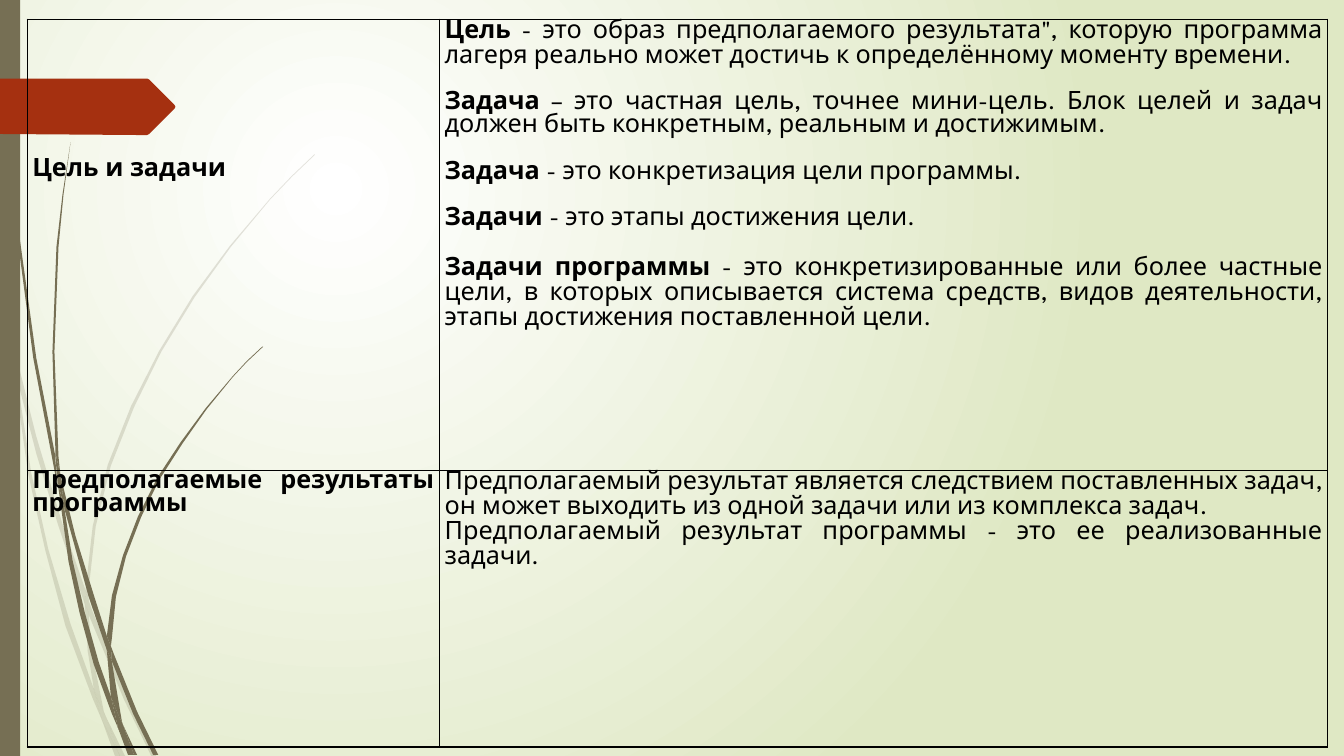
import pptx
import pptx.util
import pptx.dml.color
import pptx.enum.shapes
import pptx.enum.text
import pptx.oxml
import pptx.oxml.ns
import lxml.etree

Inches = pptx.util.Inches
Pt = pptx.util.Pt
RGBColor = pptx.dml.color.RGBColor

OLIVE = RGBColor(0x76, 0x6F, 0x54)
RUST = RGBColor(0xA5, 0x30, 0x10)
BLACK = RGBColor(0, 0, 0)
WHITE = RGBColor(0xFF, 0xFF, 0xFF)
LIME = RGBColor(0xDF, 0xE8, 0xC4)
FONT = "League Spartan"
SIZE = 18
GAP = 16.6  # height of one text line, in points
LOOSE = 1.07

# Outlines of the grass blades, in hundredths of an inch
PALE = [
    [(58, 522), (84, 599), (85, 586), (62, 520), (36, 433), (14, 345), (17, 376),
     (36, 450)],
    [(92, 607), (88, 596), (88, 610), (123, 694), (150, 750), (155, 750), (127, 692)],
    [(119, 750), (124, 750), (105, 711)],
    [(93, 683), (70, 619), (48, 545), (31, 469), (17, 376), (11, 350), (28, 470),
     (45, 546), (65, 621), (92, 693), (101, 714), (99, 707)],
    [(84, 599), (87, 646), (93, 683), (96, 692), (105, 711), (103, 706), (91, 646),
     (88, 610), (88, 608)],
    [(88, 584), (95, 522), (110, 462), (133, 404), (160, 349), (193, 295), (229, 245),
     (268, 198), (290, 175), (312, 154), (312, 153), (289, 175), (268, 197), (228, 244),
     (191, 294), (158, 348), (130, 403), (107, 461), (92, 522), (85, 584), (85, 586),
     (88, 596)],
    [(101, 714), (114, 750), (119, 750)],
    [(88, 608), (88, 610), (88, 596), (85, 586), (84, 599)],
    [(96, 692), (93, 683), (99, 707), (101, 714), (119, 750), (105, 711)],
]
DARK = [
    [(7, 110), (17, 233), (33, 355), (56, 477), (57, 481), (55, 457), (55, 453),
     (36, 355), (19, 232), (8, 109), (5, 48), (4, 0), (3, 0), (4, 48)],
    [(88, 592), (106, 645), (106, 631), (93, 590), (75, 532), (60, 472), (64, 505)],
    [(113, 649), (110, 641), (111, 656), (132, 708), (152, 749), (157, 749), (136, 706)],
    [(110, 691), (98, 657), (84, 607), (72, 556), (64, 505), (57, 477), (68, 557),
     (79, 608), (93, 659), (111, 708), (117, 722), (116, 717)],
    [(60, 472), (58, 453), (54, 349), (58, 245), (63, 193), (70, 141), (62, 193),
     (56, 245), (52, 349), (55, 449)],
    [(133, 749), (136, 749), (122, 719)],
    [(57, 477), (64, 505), (60, 472), (55, 449), (55, 453)],
    [(111, 633), (115, 592), (125, 552), (140, 513), (158, 476), (181, 440), (205, 406),
     (231, 374), (245, 359), (261, 344), (260, 344), (245, 358), (231, 373), (204, 405),
     (179, 439), (156, 474), (137, 512), (122, 551), (111, 591), (106, 631), (110, 641)],
    [(117, 722), (127, 749), (131, 749)],
    [(106, 645), (110, 691), (116, 706), (122, 719), (121, 716), (111, 656), (109, 651)],
    [(106, 645), (109, 651), (111, 656), (110, 641), (106, 631)],
    [(116, 706), (110, 691), (116, 717), (117, 722), (130, 749), (133, 749), (122, 719)],
]
ARROW = [(173, 108), (148, 133), (146, 134), (136, 134), (0, 133), (0, 78),
         (146, 78), (148, 79), (173, 104), (174, 106)]

# Cell text: (space before, line spacing, [(text, bold), ...])
GOALS = [
    (0, LOOSE, [("Цель", True),
                (" - это образ предполагаемого результата\", которую программа лагеря "
                 "реально может достичь к определённому моменту времени.", False)]),
    (GAP, 1, [("Задача", True),
              (" – это частная цель, точнее мини-цель. Блок целей и задач должен быть "
               "конкретным, реальным и достижимым.", False)]),
    (GAP, 1, [("Задача ", True), ("- это конкретизация цели программы.", False)]),
    (GAP, 1, [("Задачи ", True), ("- это этапы достижения цели.", False)]),
    (GAP * LOOSE, LOOSE, [
        ("Задачи программы", True),
        (" - это конкретизированные или более частные цели, в которых описывается "
         "система средств, видов деятельности, этапы достижения поставленной цели.",
         False)]),
]
RESULTS = [
    (0, LOOSE, [("Предполагаемый результат является следствием поставленных задач, он "
                 "может выходить из одной задачи или из комплекса задач.", False)]),
    (0, LOOSE, [("Предполагаемый результат программы - это ее реализованные задачи.",
                 False)]),
]
ROWS = [
    [[(0, 1, [("Цель и задачи", True)])], GOALS],
    [[(0, 1, [("Предполагаемые результаты программы", True)])], RESULTS],
]


def backdrop(slide):
    """Radial gradient centred in the upper left quarter."""
    fill = slide.background.fill
    fill.gradient()
    for place, (stop, color) in enumerate(zip(fill.gradient_stops, (WHITE, LIME))):
        stop.color.rgb = color
        stop.position = place
    grad = slide.background._cSld.find(".//" + pptx.oxml.ns.qn("a:gradFill"))
    grad.remove(grad.find(pptx.oxml.ns.qn("a:lin")))
    circle = lxml.etree.SubElement(grad, pptx.oxml.ns.qn("a:path"), path="circle")
    lxml.etree.SubElement(circle, pptx.oxml.ns.qn("a:fillToRect"),
                          l="50000", t="50000", r="100000", b="100000")


def paint(shape, color, alpha=100):
    shape.shadow.inherit = False
    shape.line.fill.background()
    shape.fill.solid()
    shape.fill.fore_color.rgb = color
    if alpha < 100:
        tone = shape.fill._xPr.find(".//" + pptx.oxml.ns.qn("a:srgbClr"))
        lxml.etree.SubElement(tone, pptx.oxml.ns.qn("a:alpha"), val=str(alpha * 1000))


def outline(slide, points, color, alpha=100):
    pen = slide.shapes.build_freeform(*points[0], scale=Inches(.01))
    pen.add_line_segments(points[1:], close=True)
    paint(pen.convert_to_shape(), color, alpha)


def border(cell):
    props = cell._tc.get_or_add_tcPr()
    for side in ("lnL", "lnR", "lnT", "lnB"):
        line = lxml.etree.SubElement(props, pptx.oxml.ns.qn("a:" + side),
                                     w=str(Pt(1)))
        fill = lxml.etree.SubElement(line, pptx.oxml.ns.qn("a:solidFill"))
        lxml.etree.SubElement(fill, pptx.oxml.ns.qn("a:srgbClr"), val=str(BLACK))


def write(cell, paras):
    frame = cell.text_frame
    for i, (before, spacing, runs) in enumerate(paras):
        para = frame.add_paragraph() if i else frame.paragraphs[0]
        para.alignment = pptx.enum.text.PP_ALIGN.JUSTIFY
        para.line_spacing = spacing
        if before:
            para.space_before = Pt(before)
        for text, bold in runs:
            run = para.add_run()
            run.text = text
            run.font.name = FONT
            run.font.size = Pt(SIZE)
            run.font.bold = bold
            run.font.color.rgb = BLACK


def grid(slide):
    table = slide.shapes.add_table(2, 2, Inches(.27), Inches(.19),
                                   Inches(12.9), Inches(7.22)).table
    table.first_row = table.horz_banding = False
    for col, width in zip(table.columns, (4.09, 8.81)):
        col.width = Inches(width)
    for row, height in zip(table.rows, (4.48, 2.74)):
        row.height = Inches(height)
    for r, row in enumerate(ROWS):
        for c, paras in enumerate(row):
            cell = table.cell(r, c)
            cell.margin_left = cell.margin_right = Inches(.05)
            cell.margin_top = cell.margin_bottom = 0
            border(cell)
            cell.fill.background()
            write(cell, paras)
    # The first heading sits six lines down
    table.cell(0, 0).margin_top = Pt(6 * GAP)


def main():
    deck = pptx.Presentation()
    deck.slide_width, deck.slide_height = Inches(13.33), Inches(7.5)
    slide = deck.slides.add_slide(deck.slide_layouts[6])
    backdrop(slide)
    # Grass, side bar and arrow
    for blade in PALE:
        outline(slide, blade, OLIVE, 20)
    for blade in DARK:
        outline(slide, blade, OLIVE)
    bar = slide.shapes.add_shape(pptx.enum.shapes.MSO_SHAPE.RECTANGLE,
                                 0, 0, Inches(.2), Inches(7.5))
    paint(bar, OLIVE)
    outline(slide, ARROW, RUST)
    # Goals and results
    grid(slide)
    deck.save("out.pptx")


if __name__ == "__main__":
    main()
